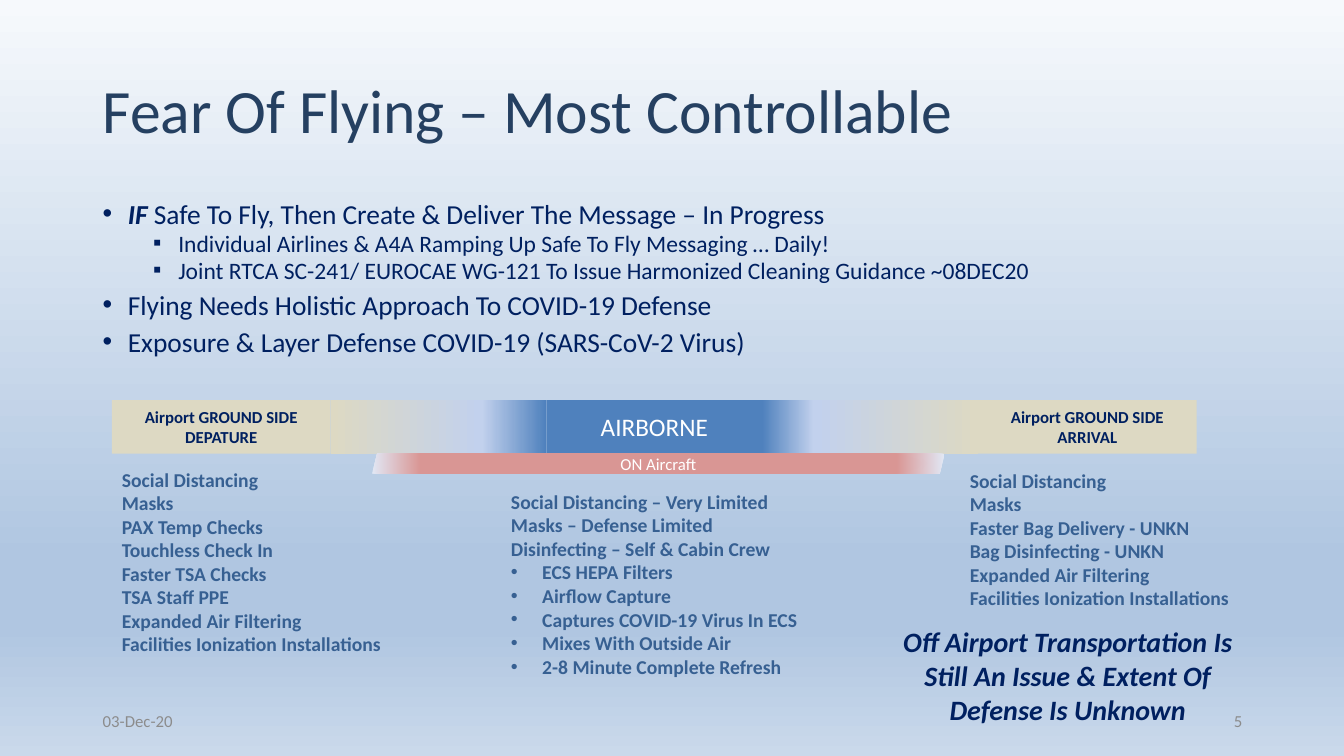
from dataclasses import dataclass

from lxml.etree import SubElement
from pptx import Presentation
from pptx.dml.color import RGBColor
from pptx.enum.shapes import MSO_SHAPE
from pptx.enum.text import MSO_ANCHOR, PP_ALIGN
from pptx.oxml.ns import qn
from pptx.util import Inches, Pt

COLORS = {
    "title": "254061", "navy": "002060", "list": "376092", "footer": "8C8C8C",
    "white": "FFFFFF", "sand": "DDD9C3", "haze": "C2D1ED", "sky": "4F81BD",
    "rose": "D99694", "mist": "E1E8F5",
    "top": "F6F9FC", "horizon": "B0C6E1", "bottom": "CAD9EB",
}
Stops = list[tuple[int, str]]


@dataclass
class Style:
    size: float
    color: str
    bold: bool = False
    italic: bool = False
    align: PP_ALIGN = PP_ALIGN.LEFT
    line_spacing: float | None = None
    before: float = 0


@dataclass
class Line:
    text: str
    style: Style
    bullet: str = ""
    margin: float = 0
    hanging: float = 0
    lead: str = ""


@dataclass
class Block:
    left: float
    top: float
    width: float
    height: float
    lines: list[Line]
    anchor: MSO_ANCHOR = MSO_ANCHOR.TOP
    wrap: bool = True


@dataclass
class Phase:
    width: float
    stops: Stops
    label: str = ""
    style: Style | None = None


TITLE = Style(44, "title", line_spacing=0.9)
POINT = Style(19.6, "navy", line_spacing=0.7, before=10)
SUBPOINT = Style(16.8, "navy", line_spacing=0.7, before=5)
GROUND = Style(12, "navy", bold=True, align=PP_ALIGN.CENTER)
AIR = Style(18, "white", align=PP_ALIGN.CENTER)
ABOARD = Style(12, "white", align=PP_ALIGN.CENTER)
MEASURE = Style(14, "list", bold=True)
REMARK = Style(20, "navy", bold=True, italic=True, align=PP_ALIGN.CENTER)
DATE = Style(12, "footer")
NUMBER = Style(12, "footer", align=PP_ALIGN.RIGHT)


def point(text: str, lead: str = "") -> Line:
    return Line(text, POINT, "•", 0.25, 0.25, lead)


def subpoint(text: str) -> Line:
    return Line(text, SUBPOINT, "▪", 0.75, 0.25)


def measures(*texts: str) -> list[Line]:
    return [Line(text, MEASURE) for text in texts]


def cabin_measures(*texts: str) -> list[Line]:
    return [Line(text, MEASURE, "•", 0.31, 0.31) for text in texts]


BLOCKS = [
    Block(0.92, 0.4, 11.5, 1.45, [Line("Fear Of Flying – Most Controllable", TITLE)], MSO_ANCHOR.MIDDLE),
    Block(0.92, 2, 11.5, 1.67, [
        point(" Safe To Fly, Then Create & Deliver The Message – In Progress", lead="IF"),
        subpoint("Individual Airlines & A4A Ramping Up Safe To Fly Messaging … Daily!"),
        subpoint("Joint RTCA SC-241/ EUROCAE WG-121 To Issue Harmonized Cleaning Guidance ~08DEC20"),
        point("Flying Needs Holistic Approach To COVID-19 Defense"),
        point("Exposure & Layer Defense COVID-19 (SARS-CoV-2 Virus)"),
    ]),
    Block(1.11, 4.59, 2.8, 2.22, measures(
        "Social Distancing", "Masks", "PAX Temp Checks", "Touchless Check In",
        "Faster TSA Checks", "TSA Staff PPE", "Expanded Air Filtering",
        "Facilities Ionization Installations"), wrap=False),
    Block(9.52, 4.6, 2.8, 1.75, measures(
        "Social Distancing", "Masks", "Faster Bag Delivery - UNKN",
        "Bag Disinfecting - UNKN", "Expanded Air Filtering",
        "Facilities Ionization Installations"), wrap=False),
    Block(8.62, 6.15, 3.94, 1.11, [
        Line("Off Airport Transportation Is Still An Issue & Extent Of Defense Is Unknown", REMARK)]),
    Block(4.97, 4.81, 3.07, 2.46, measures(
        "Social Distancing – Very Limited", "Masks – Defense Limited",
        "Disinfecting – Self & Cabin Crew") + cabin_measures(
        "ECS HEPA Filters", "Airflow Capture", "Captures COVID-19 Virus In ECS",
        "Mixes With Outside Air", "2-8 Minute Complete Refresh"), wrap=False),
    Block(0.92, 6.95, 3, 0.4, [Line("03-Dec-20", DATE)], MSO_ANCHOR.MIDDLE),
    Block(9.42, 6.95, 3, 0.4, [Line("5", NUMBER)], MSO_ANCHOR.MIDDLE),
]

PHASES = [
    Phase(2.17, [(0, "sand")], "Airport GROUND SIDE DEPATURE", GROUND),
    Phase(2.14, [(0, "sand"), (70, "haze"), (100, "sky")]),
    Phase(2.14, [(0, "sky")], "AIRBORNE", AIR),
    Phase(2.14, [(0, "sky"), (24, "haze"), (100, "sand")]),
    Phase(2.17, [(0, "sand")], "Airport GROUND SIDE ARRIVAL", GROUND),
]


def paint(fill, holder, stops: Stops, angle: int = 0, radial: bool = False) -> None:
    """Fill with one colour, or swap that fill in holder for a gradient if there are more stops."""
    fill.solid()
    fill.fore_color.rgb = RGBColor.from_string(COLORS[stops[0][1]])
    if len(stops) == 1:
        return
    solid = next(holder.iter(qn("a:solidFill")))
    gradient = SubElement(solid.getparent(), qn("a:gradFill"), rotWithShape="1")
    stop_list = SubElement(gradient, qn("a:gsLst"))
    for position, color in stops:
        stop = SubElement(stop_list, qn("a:gs"), pos=str(position * 1000))
        SubElement(stop, qn("a:srgbClr"), val=COLORS[color])
    if radial:
        center = SubElement(gradient, qn("a:path"), path="circle")
        SubElement(center, qn("a:fillToRect"), l="50000", t="50000", r="50000", b="50000")
    else:
        SubElement(gradient, qn("a:lin"), ang=str(angle * 60000), scaled="0")
    solid.getparent().replace(solid, gradient)


def write(frame, lines: list[Line]) -> None:
    for index, line in enumerate(lines):
        para = frame.add_paragraph() if index else frame.paragraphs[0]
        style = line.style
        para.alignment = style.align
        if style.line_spacing:
            para.line_spacing = style.line_spacing
        if index and style.before:
            para.space_before = Pt(style.before)
        if line.bullet:
            properties = para._p.get_or_add_pPr()
            properties.set("marL", str(Inches(line.margin)))
            properties.set("indent", str(-Inches(line.hanging)))
            SubElement(properties, qn("a:buFont"), typeface="Arial")
            SubElement(properties, qn("a:buChar"), char=line.bullet)
        font = para.font
        font.name = "Calibri"
        font.size = Pt(style.size)
        font.bold = style.bold
        font.italic = style.italic
        font.color.rgb = RGBColor.from_string(COLORS[style.color])
        if line.lead:
            span = para.add_run()
            span.text = line.lead
            span.font.bold = span.font.italic = True
        para.add_run().text = line.text


def add_block(page, block: Block) -> None:
    box = page.shapes.add_textbox(*map(Inches, (block.left, block.top, block.width, block.height)))
    frame = box.text_frame
    frame.word_wrap = block.wrap
    frame.vertical_anchor = block.anchor
    write(frame, block.lines)


def add_band(page, kind: MSO_SHAPE, left: float, top: float, height: float,
             phase: Phase, radial: bool = False) -> None:
    band = page.shapes.add_shape(kind, *map(Inches, (left, top, phase.width, height)))
    band.shadow.inherit = False
    band.line.fill.background()
    paint(band.fill, band._element.spPr, phase.stops, radial=radial)
    if phase.style:
        band.text_frame.vertical_anchor = MSO_ANCHOR.MIDDLE
        write(band.text_frame, [Line(phase.label, phase.style)])


def main() -> None:
    deck = Presentation()
    deck.slide_width, deck.slide_height = Inches(13.33), Inches(7.5)
    page = deck.slides.add_slide(deck.slide_layouts[6])
    paint(page.background.fill, page._element,
          [(0, "top"), (74, "horizon"), (83, "horizon"), (100, "bottom")], angle=90)
    left = 1.11
    for phase in PHASES:
        add_band(page, MSO_SHAPE.RECTANGLE, left, 3.97, 0.53, phase)
        left += phase.width
    aircraft = Phase(5.68, [(0, "rose"), (83, "rose"), (100, "mist")], "ON Aircraft", ABOARD)
    add_band(page, MSO_SHAPE.PARALLELOGRAM, 3.69, 4.5, 0.2, aircraft, radial=True)
    for block in BLOCKS:
        add_block(page, block)
    deck.save("out.pptx")


if __name__ == "__main__":
    main()
